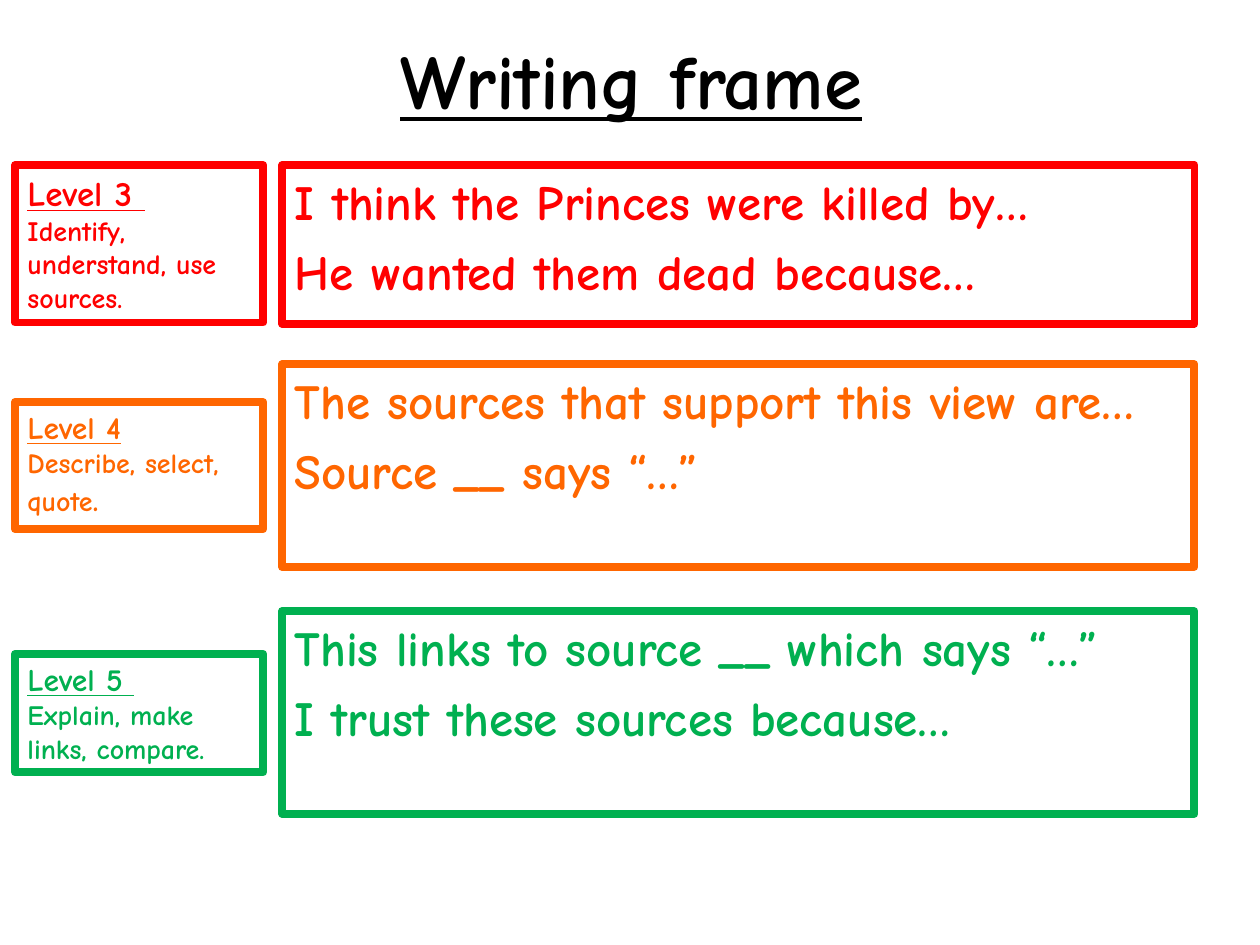
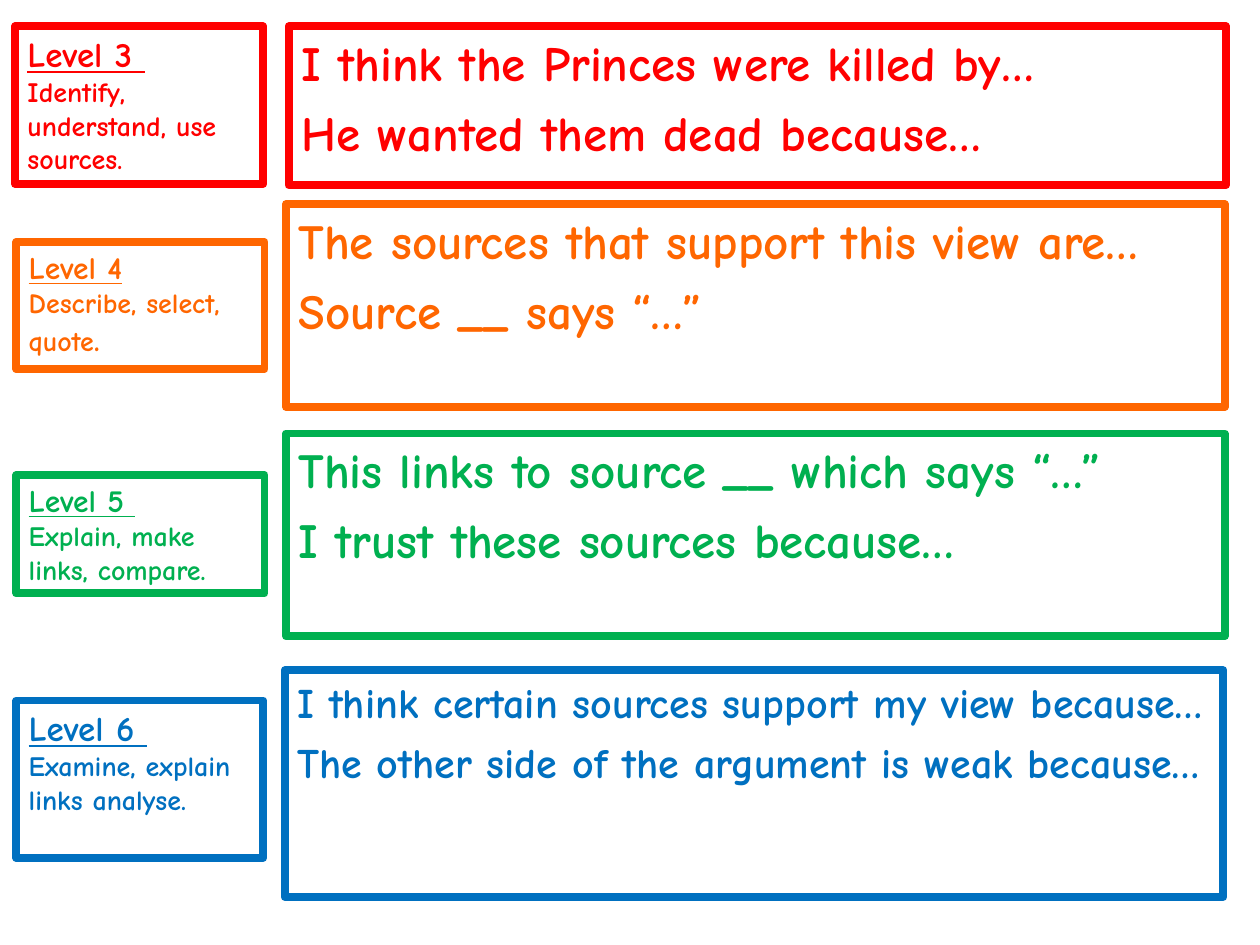
"""Build two writing-frame slides with coloured level boxes and sentence starters."""
from lxml import etree
from pptx import Presentation
from pptx.dml.color import RGBColor
from pptx.enum.shapes import MSO_SHAPE
from pptx.enum.text import MSO_ANCHOR, MSO_AUTO_SIZE, PP_ALIGN
from pptx.oxml.ns import qn
from pptx.util import Pt

RECTANGLE = MSO_SHAPE.RECTANGLE
LEFT, CENTER = PP_ALIGN.LEFT, PP_ALIGN.CENTER
TOP, MIDDLE = MSO_ANCHOR.TOP, MSO_ANCHOR.MIDDLE
FIXED_SIZE = MSO_AUTO_SIZE.NONE

EMU_PER_PX = 9144
FONT = "Comic Neue"
BORDER = 4.5
SPACE_RATIO = 0.23
COLORS = {
    "title": "000000",
    "level 3": "FF0000",
    "level 4": "FF6600",
    "level 5": "00B050",
    "level 6": "0070C0",
}

LEVELS = {
    "level 3": {
        "heading": ("Level 3 ", 20),
        "skills": [("Identify, understand, use sources.", 16)],
        "starters": ["I think the Princes were killed by…", "He wanted them dead because…"],
        "starter_size": 28,
    },
    "level 4": {
        "heading": ("Level 4", 18),
        "skills": [("Describe, select, quote", 16), (".", 18)],
        "starters": ["The sources that support this view are…", "Source __ says “…”"],
        "starter_size": 28,
    },
    "level 5": {
        "heading": ("Level 5 ", 18),
        "skills": [("Explain, make links, compare.", 16)],
        "starters": ["This links to source __ which says “…”", "I trust these sources because…"],
        "starter_size": 28,
    },
    "level 6": {
        "heading": ("Level 6 ", 20),
        "skills": [("Examine, explain links analyse.", 16)],
        "starters": [
            "I think certain sources support my view because…",
            "The other side of the argument is weak because…",
        ],
        "starter_size": 24,
    },
}

SLIDES = [
    {
        "title": "Writing frame",
        "rows": {
            "level 3": ((12, 131, 197, 125), (224, 131, 724, 126)),
            "level 4": ((12, 319, 197, 101), (224, 289, 724, 161)),
            "level 5": ((12, 519, 197, 94), (224, 485, 724, 161)),
        },
    },
    {
        "title": None,
        "rows": {
            "level 3": ((12, 21, 197, 125), (229, 21, 744, 126)),
            "level 4": ((13, 192, 197, 101), (227, 162, 745, 161)),
            "level 5": ((13, 377, 197, 94), (227, 344, 745, 161)),
            "level 6": ((13, 556, 196, 125), (226, 532, 745, 180)),
        },
    },
]


def px(length):
    """Turn px into EMU."""
    return length * EMU_PER_PX


def set_attributes(target, values):
    """Set every attribute named in a dict of format values."""
    for name, value in values.items():
        setattr(target, name, value)


def place(shape, box):
    """Move and size a shape to a px box."""
    set_attributes(shape, dict(zip(("left", "top", "width", "height"), map(px, box))))


def add_run(paragraph, text, size, color, underline=False):
    """Add one bold run in the shared font."""
    run = paragraph.add_run()
    run.text = text
    set_attributes(run.font, {"name": FONT, "size": Pt(size), "bold": True, "underline": underline})
    run.font.color.rgb = RGBColor.from_string(COLORS[color])


def add_title(slide, text):
    """Fill the title placeholder, or remove it when there is no title."""
    title = slide.shapes.title
    if text is None:
        title.element.getparent().remove(title.element)
        return
    place(title, (51, 0, 900, 125))
    title.text_frame.vertical_anchor = MIDDLE
    paragraph = title.text_frame.paragraphs[0]
    paragraph.alignment = CENTER
    add_run(paragraph, text, 44, "title", underline=True)


def add_rectangle(slide):
    """Add a rectangle without shadow."""
    rectangle = slide.shapes.add_shape(RECTANGLE, 0, 0, 0, 0)
    rectangle.shadow.inherit = False
    return rectangle


def frame_box(shape, box, color):
    """Give a shape its place, coloured border and text settings."""
    place(shape, box)
    shape.fill.background()
    shape.line.color.rgb = RGBColor.from_string(COLORS[color])
    shape.line.width = Pt(BORDER)
    settings = {"word_wrap": True, "auto_size": FIXED_SIZE, "vertical_anchor": TOP}
    set_attributes(shape.text_frame, settings)


def write_paragraphs(shape, paragraphs, color, space=0):
    """Write left-aligned paragraphs, each a list of run arguments."""
    frame = shape.text_frame
    for index, runs in enumerate(paragraphs):
        paragraph = frame.add_paragraph() if index else frame.paragraphs[0]
        set_attributes(paragraph, {"alignment": LEFT, "space_before": Pt(space)})
        properties = paragraph._p.get_or_add_pPr()
        properties.set("marL", "0")
        properties.set("indent", "0")
        etree.SubElement(properties, qn("a:buNone"))
        for text, size, underline in runs:
            add_run(paragraph, text, size, color, underline)


def add_starters(shape, box, level):
    """Write the sentence starters of a level into a framed shape."""
    content = LEVELS[level]
    size = content["starter_size"]
    frame_box(shape, box, level)
    paragraphs = [[(text, size, False)] for text in content["starters"]]
    write_paragraphs(shape, paragraphs, level, size * SPACE_RATIO)


def add_level(slide, box, level):
    """Add the box that names a level and its skills."""
    content = LEVELS[level]
    shape = add_rectangle(slide)
    frame_box(shape, box, level)
    heading = [(*content["heading"], True)]
    skills = [(text, size, False) for text, size in content["skills"]]
    write_paragraphs(shape, [heading, skills], level)


def add_frame_slide(presentation, title, rows):
    """Add a slide with one row of boxes for each level."""
    slide = presentation.slides.add_slide(presentation.slide_layouts[1])
    add_title(slide, title)
    for index, (level, (level_box, starter_box)) in enumerate(rows.items()):
        starters = add_rectangle(slide) if index else slide.placeholders[1]
        add_starters(starters, starter_box, level)
        add_level(slide, level_box, level)


def main():
    """Build and save the presentation."""
    presentation = Presentation()
    set_attributes(presentation, {"slide_width": px(1000), "slide_height": px(750)})
    for content in SLIDES:
        add_frame_slide(presentation, content["title"], content["rows"])
    presentation.save("out.pptx")


if __name__ == "__main__":
    main()
